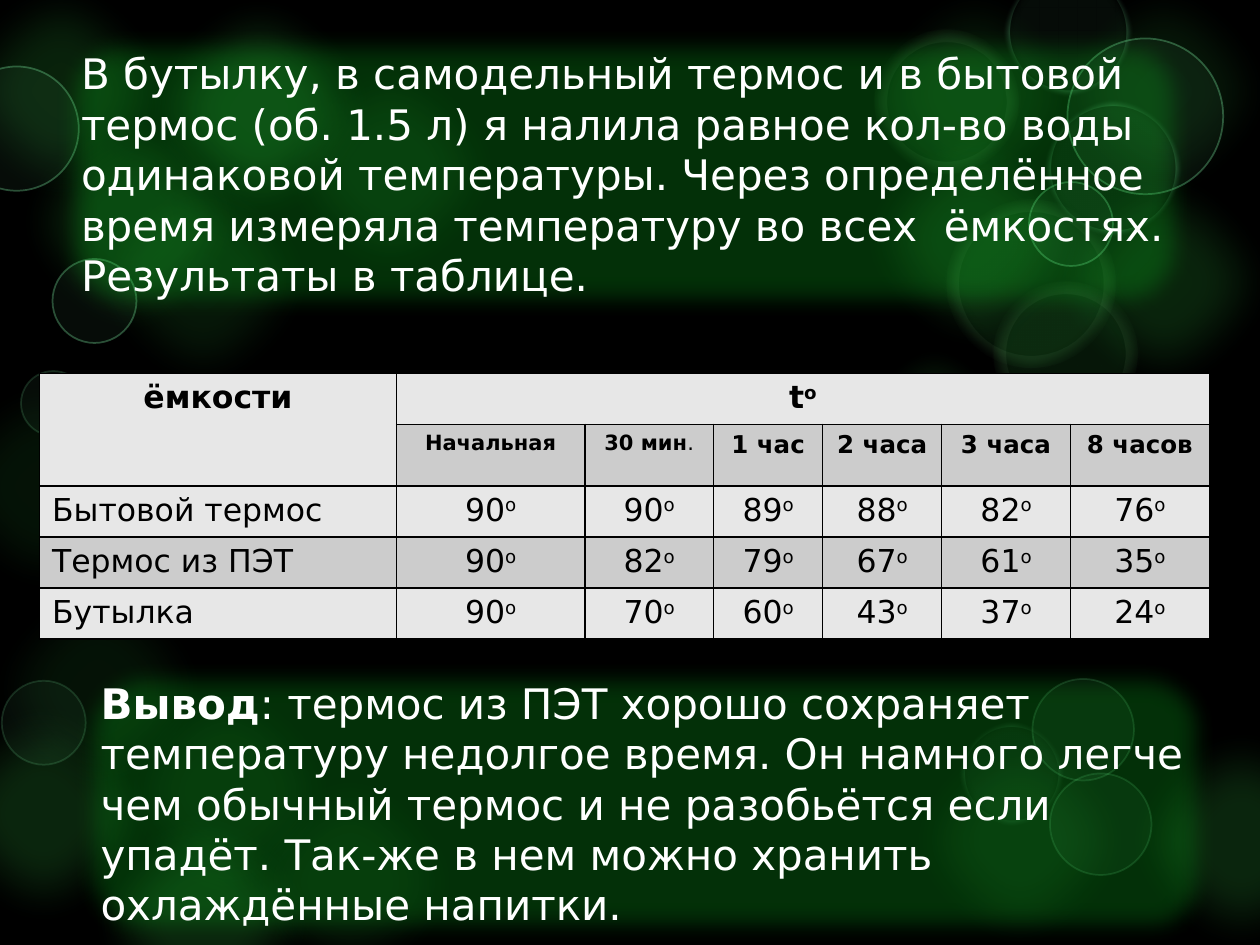
from lxml.etree import SubElement
from pptx import Presentation
from pptx.dml.color import RGBColor
from pptx.enum.shapes import MSO_SHAPE as SHAPE
from pptx.enum.text import MSO_ANCHOR as ANCHOR, PP_ALIGN as ALIGN
from pptx.oxml.ns import qn
from pptx.util import Pt

FONT = "DejaVu Sans"
COLORS = {
    "black": "000000", "white": "FFFFFF", "green": "46F25B", "mint": "86FAAD",
    "pale": "CAFBD0", "panel": "0DC422", "light": "E7E7E7", "dark": "CCCCCC",
}
GLOW = 150

GLOWS_BACK = [
    (-19, 318, GLOW, 8), (41, 86, GLOW, 10), (148, 22, GLOW, 10),
    (41, 451, GLOW, 16), (-40, -23, GLOW, 14), (73, -13, GLOW, 20),
    (0, 52, GLOW, 15), (590, -23, GLOW, 10), (482, -21, GLOW, 10),
    (590, 86, GLOW, 15), (634, 405, GLOW, 16), (-50, 390, GLOW, 16),
    (55, 377, GLOW, 8), (482, 62, GLOW, 15), (508, 405, GLOW, 10),
]
GLOWS_FRONT = [(125, 429, GLOW, 8), (-50, 203, GLOW, 8), (486, 189, 96, 10)]
HALOS = [(500, 17, 82), (541, 114, 96), (568, 161, 82)]
RINGS_BRIGHT = [
    (-26, 38, 71, 1), (30, 148, 48, 1), (575, -17, 71, 5),
    (610, 22, 89, 1), (598, 58, 76, 5), (588, 104, 48, 1),
]
RINGS_DIM = [
    (1, 389, 48, 1), (600, 442, 58, 1), (549, 413, 58, 5),
    (590, 388, 58, 1), (12, 212, 37, 1), (37, 249, 36, 1),
]

COLS = [204, 107.6, 73.6, 62.4, 68, 73.6, 79.4]
ROWS = [29.2, 35.2, 29.2, 29.2, 29.2]
TIMES = [("Начальная", 12), ("30 мин", 12), ("1 час", 14), ("2 часа", 14),
         ("3 часа", 14), ("8 часов", 14)]
READINGS = [
    ("Бытовой термос", [90, 90, 89, 88, 82, 76]),
    ("Термос из ПЭТ", [90, 82, 79, 67, 61, 35]),
    ("Бутылка", [90, 70, 60, 43, 37, 24]),
]
METHOD = ("В бутылку, в самодельный термос и в бытовой термос (об. 1.5 л) я налила "
          "равное кол-во воды одинаковой температуры. Через определённое время "
          "измеряла температуру во всех  ёмкостях. Результаты в таблице.")
CONCLUSION = (": термос из ПЭТ хорошо сохраняет температуру недолгое время. Он намного "
              "легче чем обычный термос и не разобьётся если упадёт. Так-же в нем "
              "можно хранить охлаждённые напитки.")


def paint(fill, color, alpha=100):
    """Give a fill a solid colour with an opacity in percent."""
    fill.solid()
    fill.fore_color.rgb = RGBColor.from_string(COLORS[color])
    if alpha < 100:
        clr = fill._xPr.find(qn("a:solidFill"))[0]
        SubElement(clr, qn("a:alpha"), val=str(alpha * 1000))


def soften(sp, radius):
    """Drop the shadow and fade the edges over the radius."""
    sp.shadow.inherit = False
    if radius:
        effects = sp._element.spPr.find(qn("a:effectLst"))
        SubElement(effects, qn("a:softEdge"), rad=str(Pt(radius)))


def add_run(p, text, size, color, bold=False, raised=False):
    """Append a formatted run to a paragraph."""
    r = p.add_run()
    r.text = text
    r.font.name, r.font.size, r.font.bold = FONT, Pt(size), bold
    r.font.color.rgb = RGBColor.from_string(COLORS[color])
    if raised:
        r._r.get_or_add_rPr().set("baseline", "30000")


def add_circle(slide, left, top, d, fill, alpha, soft=0, line=None):
    """Draw a translucent circle, with a line of colour, width and opacity."""
    sp = slide.shapes.add_shape(SHAPE.OVAL, Pt(left), Pt(top), Pt(d), Pt(d))
    paint(sp.fill, fill, alpha)
    if line:
        color, width, opacity = line
        sp.line.width = Pt(width)
        paint(sp.line.fill, color, opacity)
    else:
        sp.line.fill.background()
    soften(sp, soft)


def add_glows(slide, glows):
    """Draw blurred green spots."""
    for left, top, d, alpha in glows:
        add_circle(slide, left, top, d, "green", alpha, 25 * d / GLOW)


def add_backdrop(slide):
    """Fill the background and scatter glows, halos and rings over it."""
    paint(slide.background.fill, "black")
    add_glows(slide, GLOWS_BACK)
    for left, top, d in HALOS:
        add_circle(slide, left, top, d, "green", 10, 8, ("pale", 14, 6))
    for rings, opacity in ((RINGS_BRIGHT, 30), (RINGS_DIM, 15)):
        for left, top, d, width in rings:
            soft = 4 if width > 1 else 0
            add_circle(slide, left, top, d, "mint", 5, soft, ("mint", width, opacity))
    add_glows(slide, GLOWS_FRONT)


def add_panel(slide, box, runs):
    """Draw a soft rounded panel with one paragraph of text."""
    sp = slide.shapes.add_shape(SHAPE.ROUNDED_RECTANGLE, *map(Pt, box))
    paint(sp.fill, "panel", 25)
    sp.line.fill.background()
    soften(sp, 12.5)
    tf = sp.text_frame
    tf.word_wrap = True
    tf.vertical_anchor = ANCHOR.MIDDLE
    p = tf.paragraphs[0]
    p.alignment = ALIGN.LEFT
    for text, bold in runs:
        add_run(p, text, 24, "white", bold)


def style_cell(cell, fill):
    """Give a cell thin black borders and a fill."""
    tc_pr = cell._tc.get_or_add_tcPr()
    for side in ("lnL", "lnR", "lnT", "lnB"):
        ln = SubElement(tc_pr, qn(f"a:{side}"), w=str(Pt(1)))
        SubElement(SubElement(ln, qn("a:solidFill")), qn("a:srgbClr"), val=COLORS["black"])
    paint(cell.fill, fill)


def add_readings(slide, left, top):
    """Build the table of temperatures over time."""
    frame = slide.shapes.add_table(len(ROWS), len(COLS), Pt(left), Pt(top),
                                   Pt(sum(COLS)), Pt(sum(ROWS)))
    table = frame.table
    for col, width in zip(table.columns, COLS):
        col.width = Pt(width)
    for i, (row, height) in enumerate(zip(table.rows, ROWS)):
        row.height = Pt(height)
        for j, cell in enumerate(row.cells):
            style_cell(cell, "dark" if i % 2 and (i > 1 or j) else "light")
            p = cell.text_frame.paragraphs[0]
            p.alignment = ALIGN.LEFT if i > 1 and not j else ALIGN.CENTER

    def para(i, j):
        """Return the paragraph of a cell."""
        return table.cell(i, j).text_frame.paragraphs[0]

    table.cell(0, 0).merge(table.cell(1, 0))
    table.cell(0, 1).merge(table.cell(0, len(COLS) - 1))
    add_run(para(0, 0), "ёмкости", 18, "black", True)
    add_run(para(0, 1), "t", 18, "black", True)
    add_run(para(0, 1), "o", 18, "black", True, raised=True)
    for j, (label, size) in enumerate(TIMES, 1):
        add_run(para(1, j), label, size, "black", True)
    add_run(para(1, 2), ".", 12, "black")
    for i, (vessel, degrees) in enumerate(READINGS, 2):
        add_run(para(i, 0), vessel, 18, "black")
        for j, value in enumerate(degrees, 1):
            add_run(para(i, j), str(value), 18, "black")
            add_run(para(i, j), "о", 18, "black", raised=True)


def main():
    """Build the slide and save it."""
    prs = Presentation()
    prs.slide_width, prs.slide_height = Pt(720), Pt(540)
    slide = prs.slides.add_slide(prs.slide_layouts[6])
    add_backdrop(slide)
    add_readings(slide, 22.6, 213.3)
    add_panel(slide, (31, 15.4, 652, 168), [(METHOD, False)])
    add_panel(slide, (42.5, 378, 652, 162), [("Вывод", True), (CONCLUSION, False)])
    prs.save("out.pptx")


if __name__ == "__main__":
    main()
